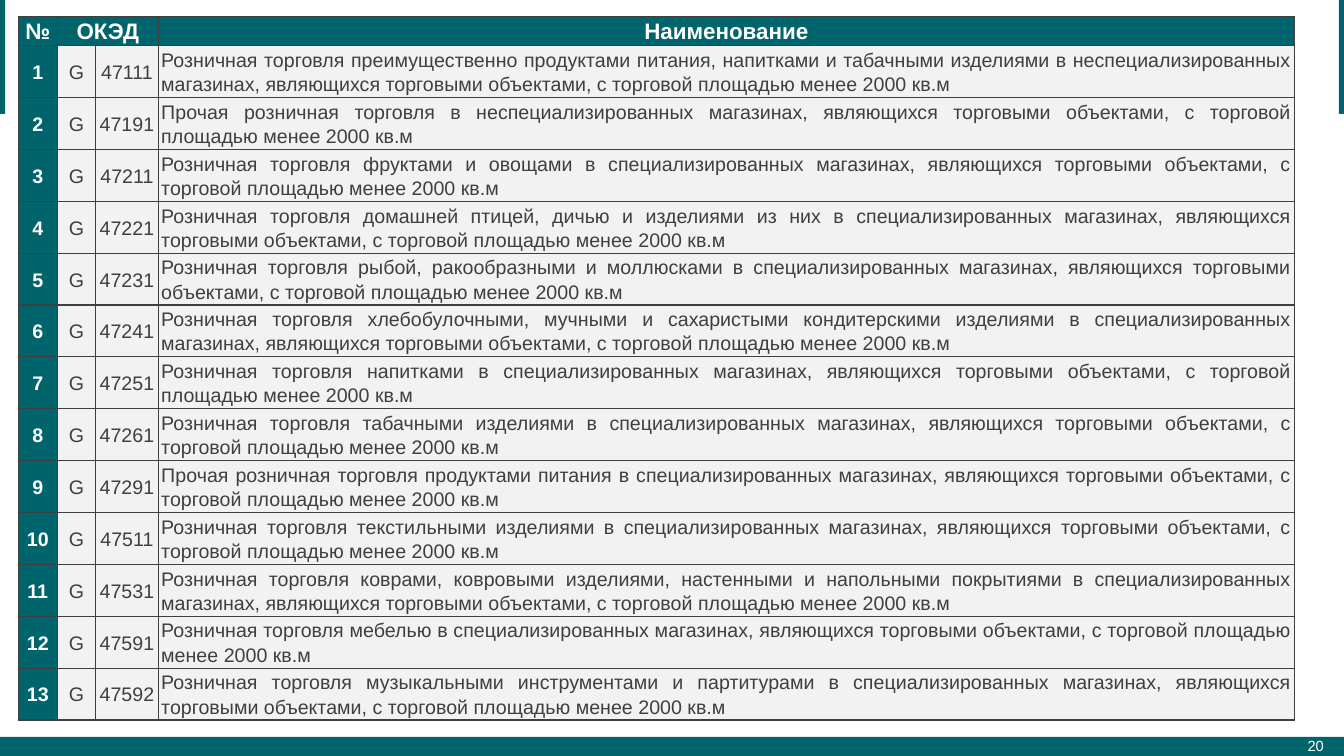
from dataclasses import dataclass

from lxml.etree import SubElement
from pptx import Presentation
from pptx.dml.color import RGBColor
from pptx.enum.shapes import MSO_SHAPE
from pptx.enum.text import MSO_ANCHOR, PP_ALIGN
from pptx.oxml.ns import qn
from pptx.slide import Slide
from pptx.table import Table, _Cell
from pptx.text.text import _Paragraph
from pptx.util import Inches, Pt

COLORS = {"teal": "00646C", "white": "FFFFFF", "gray": "F2F2F2", "dark": "3F3F3F"}
FONT = "Arial"
COLUMN_WIDTHS = (0.39, 0.38, 0.62, 11.27)
TABLE_LEFT, TABLE_TOP, TABLE_HEIGHT = 0.18, 0.16, 6.98
HEADER_HEIGHT = 0.29
LINE_SPACING = 1.1
SHOPS = "магазинах, являющихся торговыми объектами, с торговой площадью менее 2000 кв.м"


@dataclass(frozen=True)
class Bar:
    left: float
    top: float
    width: float
    height: float


@dataclass(frozen=True)
class Trade:
    code: str
    goods: str
    shop_kind: str = "специализированных"

    @property
    def name(self) -> str:
        return f"{self.goods} в {self.shop_kind} {SHOPS}"


@dataclass(frozen=True)
class CellStyle:
    fill: str
    color: str
    size: float
    bold: bool = False
    align: PP_ALIGN = PP_ALIGN.CENTER


HEADER = CellStyle("teal", "white", 16, bold=True)
NUMBER = CellStyle("teal", "white", 14, bold=True)
CODE = CellStyle("gray", "dark", 14)
NAME = CellStyle("gray", "dark", 14, align=PP_ALIGN.JUSTIFY)

BARS = (
    Bar(0, 7.31, 13.33, 0.2),
    Bar(0, -0.02, 0.05, 1.15),
    Bar(13.28, -0.02, 0.05, 1.15),
)
TRADES = (
    Trade("47111", "Розничная торговля преимущественно продуктами питания, напитками "
          "и табачными изделиями", "неспециализированных"),
    Trade("47191", "Прочая розничная торговля", "неспециализированных"),
    Trade("47211", "Розничная торговля фруктами и овощами"),
    Trade("47221", "Розничная торговля домашней птицей, дичью и изделиями из них"),
    Trade("47231", "Розничная торговля рыбой, ракообразными и моллюсками"),
    Trade("47241", "Розничная торговля хлебобулочными, мучными и сахаристыми "
          "кондитерскими изделиями"),
    Trade("47251", "Розничная торговля напитками"),
    Trade("47261", "Розничная торговля табачными изделиями"),
    Trade("47291", "Прочая розничная торговля продуктами питания"),
    Trade("47511", "Розничная торговля текстильными изделиями"),
    Trade("47531", "Розничная торговля коврами, ковровыми изделиями, настенными "
          "и напольными покрытиями"),
    Trade("47591", "Розничная торговля мебелью"),
    Trade("47592", "Розничная торговля музыкальными инструментами и партитурами"),
)


def rgb(name: str) -> RGBColor:
    return RGBColor.from_string(COLORS[name])


def set_font(para: _Paragraph, size: float, color: str, bold: bool = False) -> None:
    para.font.name = FONT
    para.font.size = Pt(size)
    para.font.bold = bold
    para.font.color.rgb = rgb(color)


def add_bar(page: Slide, bar: Bar) -> None:
    shape = page.shapes.add_shape(
        MSO_SHAPE.RECTANGLE, Inches(bar.left), Inches(bar.top),
        Inches(bar.width), Inches(bar.height))
    shape.shadow.inherit = False
    shape.fill.solid()
    shape.fill.fore_color.rgb = rgb("teal")
    shape.line.fill.background()


def add_page_number(page: Slide, number: str) -> None:
    box = page.shapes.add_textbox(Inches(11.92), Inches(7.2), Inches(1.29), Inches(0.4))
    frame = box.text_frame
    frame.word_wrap = True
    frame.vertical_anchor = MSO_ANCHOR.MIDDLE
    frame.margin_left = frame.margin_right = Inches(0.08)
    frame.margin_top = frame.margin_bottom = Inches(0.04)
    para = frame.paragraphs[0]
    para.text = number
    para.alignment = PP_ALIGN.RIGHT
    set_font(para, 10.5, "white")


def add_borders(cell: _Cell) -> None:
    properties = cell._tc.get_or_add_tcPr()
    for side in ("a:lnL", "a:lnR", "a:lnT", "a:lnB"):
        line = SubElement(properties, qn(side), w=str(Pt(1)))
        fill = SubElement(line, qn("a:solidFill"))
        SubElement(fill, qn("a:srgbClr"), val=COLORS["dark"])


def style_cell(cell: _Cell, style: CellStyle) -> None:
    add_borders(cell)
    cell.fill.solid()
    cell.fill.fore_color.rgb = rgb(style.fill)
    cell.vertical_anchor = MSO_ANCHOR.MIDDLE
    cell.margin_left = cell.margin_right = Inches(0.03)
    cell.margin_top = cell.margin_bottom = 0
    para = cell.text_frame.paragraphs[0]
    para.alignment = style.align
    para.line_spacing = LINE_SPACING
    set_font(para, style.size, style.color, style.bold)


def fill_row(table: Table, row: int, texts: tuple[str, ...],
             styles: tuple[CellStyle, ...]) -> None:
    for column, (text, style) in enumerate(zip(texts, styles)):
        cell = table.cell(row, column)
        cell.text = text
        style_cell(cell, style)


def add_trade_table(page: Slide) -> None:
    table = page.shapes.add_table(
        len(TRADES) + 1, len(COLUMN_WIDTHS), Inches(TABLE_LEFT), Inches(TABLE_TOP),
        Inches(sum(COLUMN_WIDTHS)), Inches(TABLE_HEIGHT)).table
    table.horz_banding = False
    for column, width in zip(table.columns, COLUMN_WIDTHS):
        column.width = Inches(width)
    row_height = (TABLE_HEIGHT - HEADER_HEIGHT) / len(TRADES)
    for index, row in enumerate(table.rows):
        row.height = Inches(row_height if index else HEADER_HEIGHT)

    # Header, with one heading over both code columns
    fill_row(table, 0, ("№", "ОКЭД", "", "Наименование"), (HEADER,) * 4)
    table.cell(0, 1).merge(table.cell(0, 2))

    # One row per kind of trade
    for number, trade in enumerate(TRADES, start=1):
        fill_row(table, number, (str(number), "G", trade.code, trade.name),
                 (NUMBER, CODE, CODE, NAME))


def main() -> None:
    deck = Presentation()
    deck.slide_width = Inches(13.33)
    deck.slide_height = Inches(7.5)
    page = deck.slides.add_slide(deck.slide_layouts[6])

    # Frame of the page
    for bar in BARS:
        add_bar(page, bar)
    add_page_number(page, "20")

    # Table of activity codes
    add_trade_table(page)
    deck.save("out.pptx")


if __name__ == "__main__":
    main()
